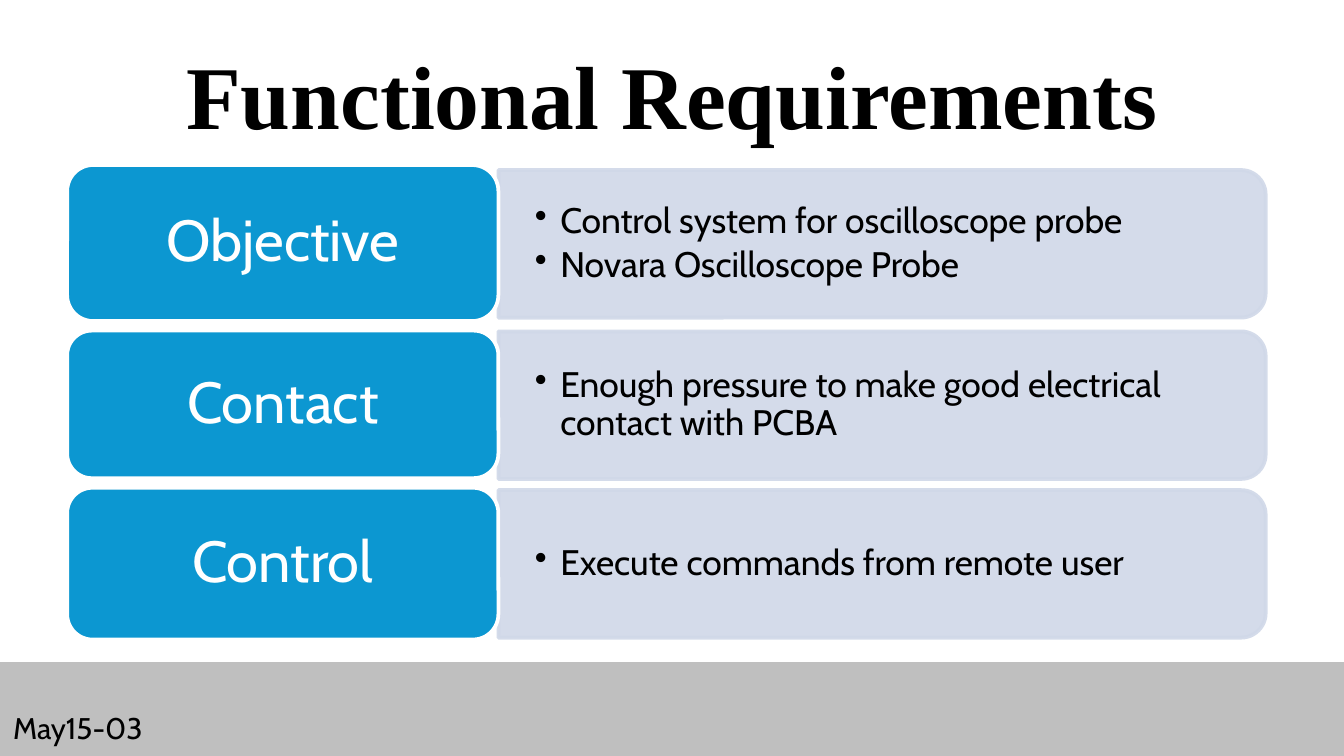
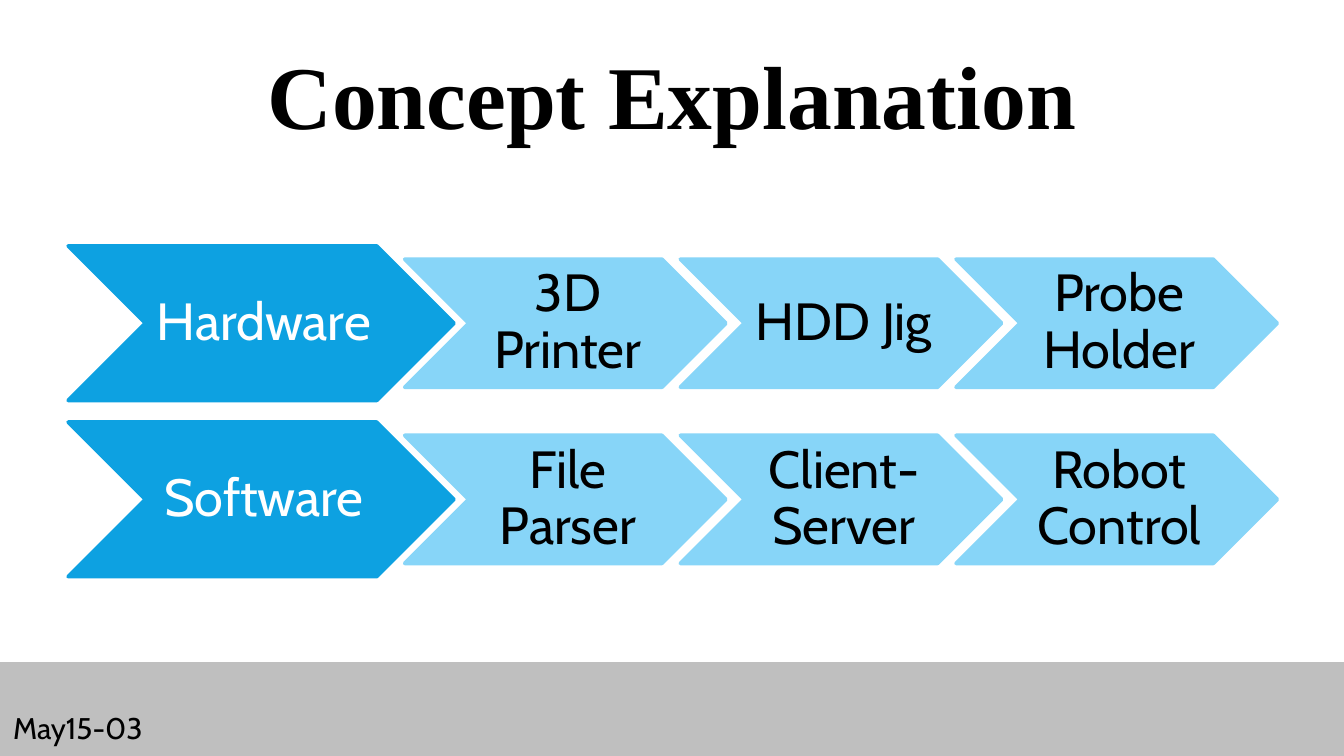
"""Build the requirements and concept slides of project May15-03."""
from pptx import Presentation
from pptx import util as u
from pptx.dml.color import RGBColor
from pptx.enum import shapes, text
from pptx.oxml import ns, xmlchemy

BLACK, WHITE = "000000", "FFFFFF"
BAND, PANEL, LABEL = "BFBFBF", "D0D8E8", "0C97D1"
TRACK, STEP = "0DA1E1", "87D5F8"
TITLE_TEXT = {"name": "Times New Roman", "size": u.Pt(48), "bold": True}
FOOTER_TEXT = {"name": "Cabin", "size": u.Pt(16)}
LABEL_TEXT = {"name": "Cabin", "size": u.Pt(31)}
BULLET_TEXT = {"name": "Cabin", "size": u.Pt(19)}
CHEVRON_TEXT = {"name": "Cabin", "size": u.Pt(28)}
CENTER, LEFT = text.PP_ALIGN.CENTER, text.PP_ALIGN.LEFT


def add_block(slide, kind, box, fill, line):
    """Draw a flat preset shape; box is left, top, width, height in cm."""
    shape = slide.shapes.add_shape(kind, *map(u.Cm, box))
    shape.shadow.inherit = False
    shape.fill.solid()
    shape.fill.fore_color.rgb = RGBColor.from_string(fill)
    shape.line.color.rgb = RGBColor.from_string(line)
    shape.line.width = u.Pt(2)
    return shape


def write_text(shape, lines, font, color, align, margins, spacing=0.9, bullets=False):
    """Fill a shape with paragraphs; margins are left, top, right, bottom in cm."""
    frame = shape.text_frame
    frame.word_wrap = True
    frame.vertical_anchor = text.MSO_ANCHOR.MIDDLE
    for side, margin in zip(("left", "top", "right", "bottom"), margins):
        setattr(frame, f"margin_{side}", u.Cm(margin))
    frame.text = "\n".join(lines)
    for paragraph in frame.paragraphs:
        paragraph.alignment = align
        paragraph.line_spacing = spacing
        if bullets:
            paragraph.space_after = u.Pt(3)
            properties = paragraph._p.get_or_add_pPr()
            properties.set("marL", str(u.Cm(0.48)))
            properties.set("indent", str(-u.Cm(0.48)))
            bullet = xmlchemy.OxmlElement("a:buChar")
            bullet.set("char", "•")
            properties.append(bullet)
        for name, value in font.items():
            setattr(paragraph.font, name, value)
        paragraph.font.color.rgb = RGBColor.from_string(color)


presentation = Presentation()
presentation.slide_width, presentation.slide_height = u.Cm(25.4), u.Cm(14.29)
default_margins = (0.25, 0.13, 0.25, 0.13)

slides = []
for heading in ("Functional Requirements", "Concept Explanation"):
    slide = presentation.slides.add_slide(presentation.slide_layouts[5])
    title = slide.shapes.title
    title.left, title.top, title.width, title.height = map(u.Cm, (1.27, 0.58, 22.86, 2.39))
    write_text(title, [heading], TITLE_TEXT, BLACK, CENTER, default_margins, 1.0)
    add_block(slide, shapes.MSO_SHAPE.RECTANGLE, (0, 12.55, 25.4, 1.74), BAND, BAND)
    footer = slide.shapes.add_textbox(*map(u.Cm, (0, 13.28, 5.28, 0.94)))
    write_text(footer, ["May15-03"], FOOTER_TEXT, BLACK, LEFT, default_margins, 1.0)
    slides.append(slide)
requirements_slide, concept_slide = slides

requirements = [
    ("Objective", 3.12, 2.95, 4.61,
     ["Control system for oscilloscope probe", "Novara Oscilloscope Probe"]),
    ("Contact", 6.25, 2.79, 7.66,
     ["Enough pressure to make good electrical contact with PCBA"]),
    ("Control", 9.22, 2.87, 10.66, ["Execute commands from remote user"]),
]
panel_left, panel_length, panel_height = 9.42, 14.5, 2.79
for name, label_top, label_height, middle, details in requirements:
    box = (panel_left + (panel_length - panel_height) / 2, middle - panel_length / 2,
           panel_height, panel_length)
    panel = add_block(requirements_slide, shapes.MSO_SHAPE.ROUND_2_SAME_RECTANGLE,
                      box, PANEL, PANEL)
    panel.rotation = 90
    for color in panel._element.spPr.iter(ns.qn("a:srgbClr")):
        alpha = xmlchemy.OxmlElement("a:alpha")
        alpha.set("val", "90000")
        color.append(alpha)
    detail_box = requirements_slide.shapes.add_textbox(
        *map(u.Cm, (panel_left, middle - 1.26, 14.35, 2.52)))
    write_text(detail_box, details, BULLET_TEXT, BLACK, LEFT,
               (0.69, 0.36, 0.69, 0.36), bullets=True)
    label = add_block(requirements_slide, shapes.MSO_SHAPE.ROUNDED_RECTANGLE,
                      (1.27, label_top, 8.15, label_height), LABEL, WHITE)
    write_text(label, [name], LABEL_TEXT, WHITE, CENTER, (0.33, 0.15, 0.33, 0.15))

tracks = [
    ("Hardware", "3D Printer", "HDD Jig", "Probe Holder"),
    ("Software", "File Parser", "Client-Server", "Robot Control"),
]
for row, names in enumerate(tracks):
    top = 4.65 + 3.33 * row
    for column, name in enumerate(names):
        if column == 0:
            box, fill, color = (1.29, top, 7.29, 2.92), TRACK, WHITE
        else:
            box = (7.65 + 5.21 * (column - 1), top + 0.25, 6.07, 2.42)
            fill, color = STEP, BLACK
        chevron = add_block(concept_slide, shapes.MSO_SHAPE.CHEVRON, box, fill, fill)
        write_text(chevron, [name], CHEVRON_TEXT, color, CENTER, (0.1, 0.05, 0, 0.05))

presentation.save("out.pptx")
